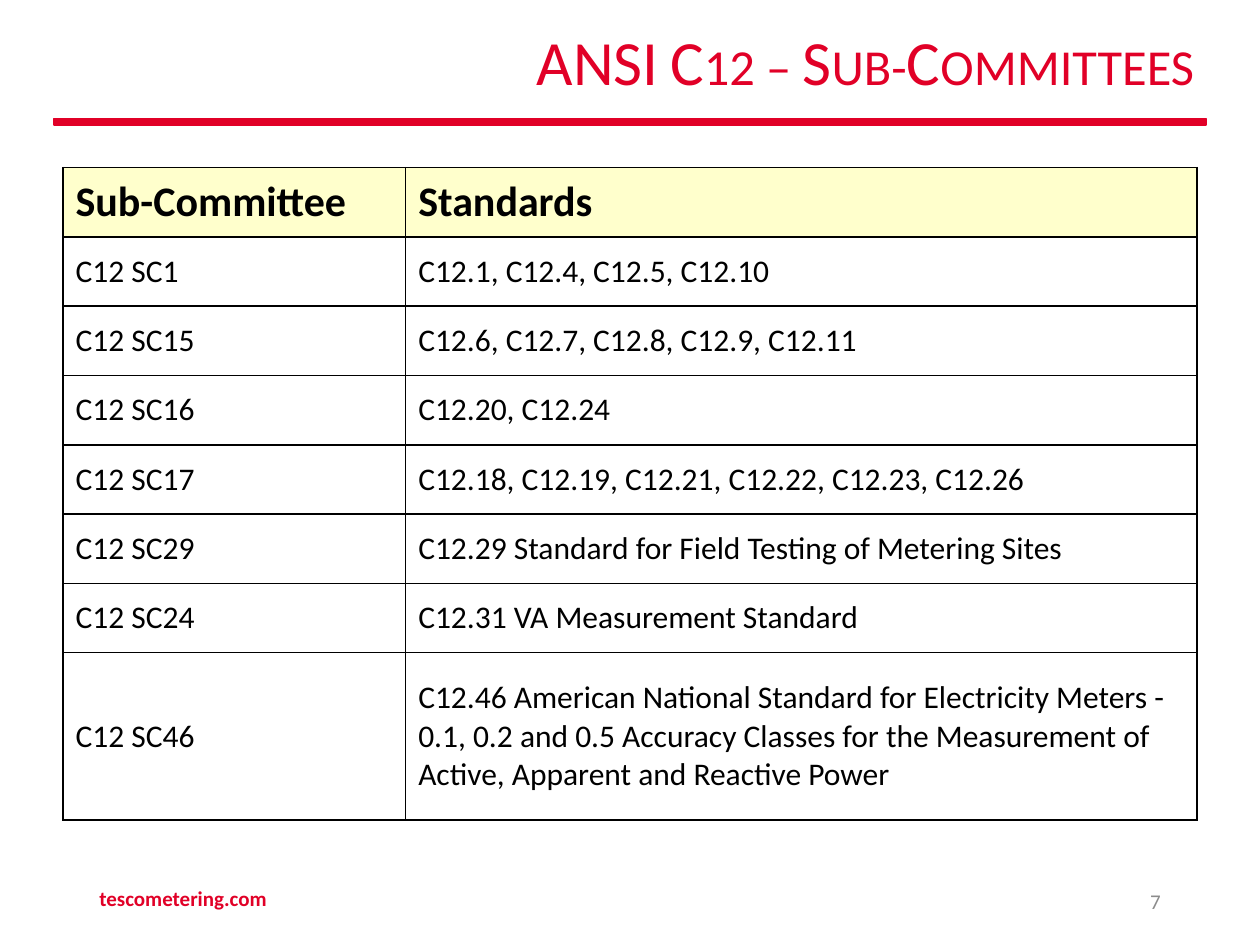
from lxml import etree
from pptx import Presentation
from pptx.dml.color import RGBColor
from pptx.enum.shapes import MSO_SHAPE
from pptx.enum.text import MSO_ANCHOR, PP_ALIGN
from pptx.oxml.ns import qn
from pptx.util import Inches, Pt

RED = RGBColor(0xE1, 0x00, 0x27)
BLACK = RGBColor(0x00, 0x00, 0x00)
CREAM = RGBColor(0xFF, 0xFF, 0xCC)
GRAY = RGBColor(0x8C, 0x8C, 0x8C)
RECTANGLE = MSO_SHAPE.RECTANGLE
MIDDLE = MSO_ANCHOR.MIDDLE
LEFT, RIGHT = PP_ALIGN.LEFT, PP_ALIGN.RIGHT
TITLE_ONLY = 5

TITLE_FORMAT = {"size": Pt(36), "color": RED}
HEADER_FORMAT = {"size": Pt(24), "color": BLACK, "bold": True}
BODY_FORMAT = {"size": Pt(18), "color": BLACK, "bold": False}
SITE_FORMAT = {"size": Pt(12), "color": RED, "bold": True}
NUMBER_FORMAT = {"size": Pt(12), "color": GRAY}

COLUMN_WIDTHS = (2.72, 6.28)
ROW_HEIGHT, LAST_ROW_HEIGHT = 0.55, 1.33
SUB_COMMITTEES = [
    ("Sub-Committee", "Standards"),
    ("C12 SC1", "C12.1, C12.4, C12.5, C12.10"),
    ("C12 SC15", "C12.6, C12.7, C12.8, C12.9, C12.11"),
    ("C12 SC16", "C12.20, C12.24"),
    ("C12 SC17", "C12.18, C12.19, C12.21, C12.22, C12.23, C12.26"),
    ("C12 SC29", "C12.29 Standard for Field Testing of Metering Sites"),
    ("C12 SC24", "C12.31 VA Measurement Standard"),
    ("C12 SC46", "C12.46 American National Standard for Electricity Meters - "
                 "0.1, 0.2 and 0.5 Accuracy Classes for the Measurement of "
                 "Active, Apparent and Reactive Power"),
]


def write(frame, text, formats, align=LEFT):
    """Put one formatted run in the frame and return it."""
    para = frame.paragraphs[0]
    para.alignment = align
    span = para.add_run()
    span.text = text
    span.font.name = "Calibri"
    for name, value in formats.items():
        if name == "color":
            span.font.color.rgb = value
        else:
            setattr(span.font, name, value)
    return span


def place(shape, box):
    for name, value in zip(("left", "top", "width", "height"), box):
        setattr(shape, name, Inches(value))


def add_title(page, box):
    title = page.shapes.title
    place(title, box)
    frame = title.text_frame
    frame.word_wrap = True
    frame.vertical_anchor = MIDDLE
    span = write(frame, "ANSI C12 – Sub-Committees", TITLE_FORMAT, RIGHT)
    span.font._element.set("cap", "small")
    frame.paragraphs[0].line_spacing = 0.9


def add_rule(page, box):
    rule = page.shapes.add_shape(RECTANGLE, *map(Inches, box))
    rule.shadow.inherit = False
    rule.fill.solid()
    rule.fill.fore_color.rgb = RED
    rule.line.color.rgb = RED
    rule.line.width = Pt(1)


def add_borders(cell):
    properties = cell._tc.get_or_add_tcPr()
    for side in ("lnL", "lnR", "lnT", "lnB"):
        line = etree.SubElement(properties, qn(f"a:{side}"), w=str(Pt(1)))
        fill = etree.SubElement(line, qn("a:solidFill"))
        etree.SubElement(fill, qn("a:srgbClr"), val=str(BLACK))


def add_committee_table(page, box):
    table = page.shapes.add_table(
        len(SUB_COMMITTEES), len(COLUMN_WIDTHS), *map(Inches, box)).table
    table.horz_banding = False
    for column, width in zip(table.columns, COLUMN_WIDTHS):
        column.width = Inches(width)
    for row in table.rows:
        row.height = Inches(ROW_HEIGHT)
    table.rows[len(SUB_COMMITTEES) - 1].height = Inches(LAST_ROW_HEIGHT)

    for row_index, texts in enumerate(SUB_COMMITTEES):
        is_header = row_index == 0
        for column_index, text in enumerate(texts):
            cell = table.cell(row_index, column_index)
            cell.vertical_anchor = MIDDLE
            add_borders(cell)
            if is_header:
                cell.fill.solid()
                cell.fill.fore_color.rgb = CREAM
            else:
                cell.fill.background()
            write(cell.text_frame, text,
                  HEADER_FORMAT if is_header else BODY_FORMAT)


def add_footer_text(page, box, text, formats, align):
    frame = page.shapes.add_textbox(*map(Inches, box)).text_frame
    frame.word_wrap = True
    frame.vertical_anchor = MIDDLE
    write(frame, text, formats, align)


def main():
    deck = Presentation()
    deck.slide_width, deck.slide_height = Inches(10), Inches(7.5)
    page = deck.slides.add_slide(deck.slide_layouts[TITLE_ONLY])
    add_rule(page, (0.43, 0.94, 9.14, 0.05))
    add_title(page, (1.7, 0.15, 7.88, 0.74))
    add_committee_table(page, (0.5, 1.33, 9, 5.17))
    add_footer_text(page, (0.69, 6.93, 3.38, 0.4),
                    "tescometering.com", SITE_FORMAT, LEFT)
    add_footer_text(page, (7.06, 6.95, 2.25, 0.4), "7", NUMBER_FORMAT, RIGHT)
    deck.save("out.pptx")


if __name__ == "__main__":
    main()
